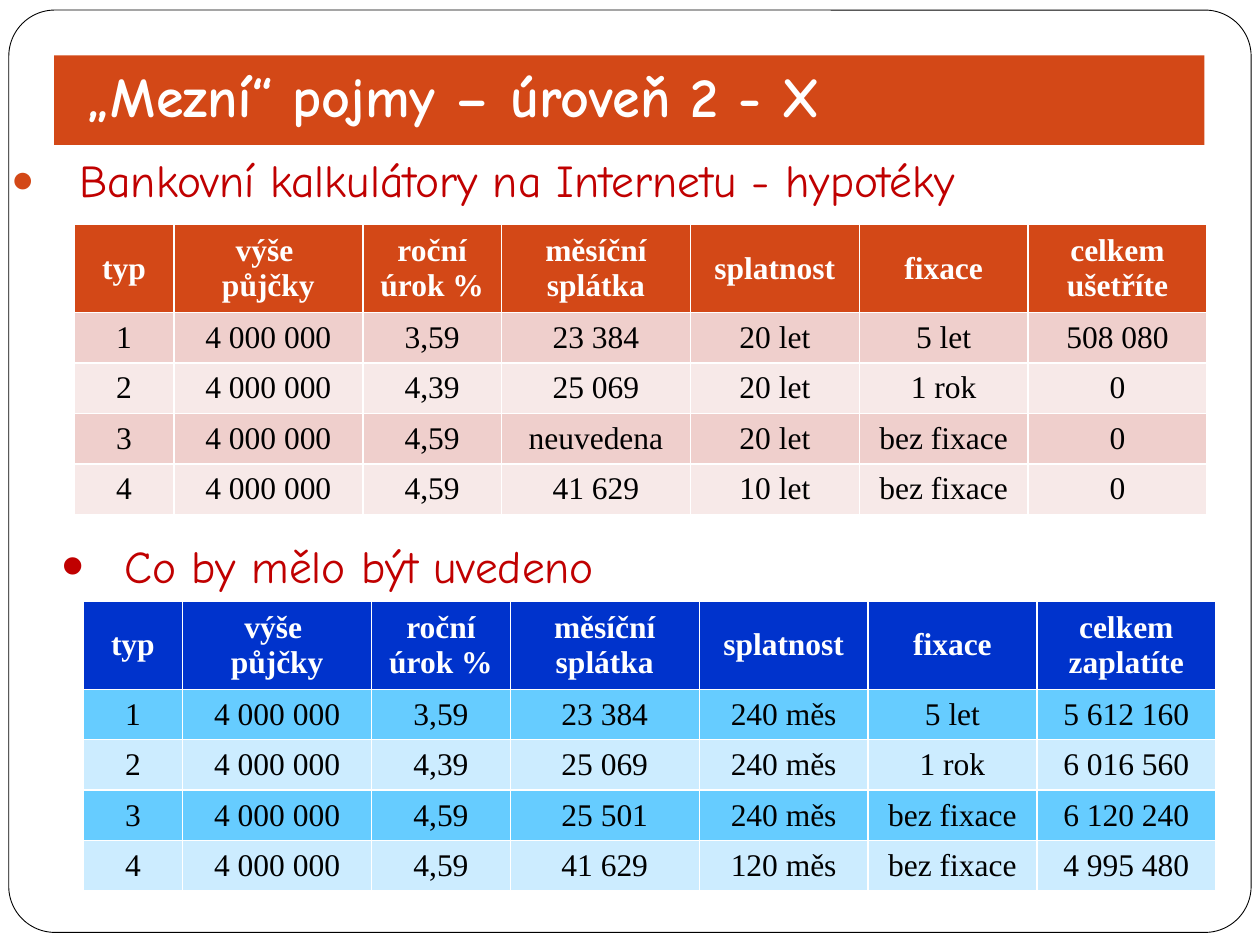
"""Build a slide with two mortgage tables, as banks show them and as they should."""
from lxml.etree import SubElement
from pptx import Presentation
from pptx.dml.color import RGBColor
from pptx.enum.shapes import MSO_SHAPE
from pptx.enum.text import MSO_ANCHOR, PP_ALIGN
from pptx.oxml.ns import qn
from pptx.util import Inches, Pt


def tint(code):
    return RGBColor.from_string(code)


def write(frame, text, font, size, color, bold=False):
    frame.text = text
    frame.word_wrap = True
    for para in frame.paragraphs:
        for run in para.runs:
            run.font.name = font
            run.font.size = Pt(size)
            run.font.bold = bold
            run.font.color.rgb = tint(color)


deck = Presentation()
deck.slide_width, deck.slide_height = Inches(10), Inches(7.5)
slide = deck.slides.add_slide(deck.slide_layouts[6])
shapes = slide.shapes

border = shapes.add_shape(MSO_SHAPE.ROUNDED_RECTANGLE, Inches(0.07), Inches(0.08),
                          Inches(9.86), Inches(7.32))
border.adjustments[0] = 0.05
border.shadow.inherit = False
border.fill.solid()
border.fill.fore_color.rgb = tint("FFFFFF")
border.line.color.rgb = tint("000000")
border.line.width = Pt(0.5)

band = shapes.add_shape(MSO_SHAPE.RECTANGLE, Inches(0.43), Inches(0.44),
                        Inches(9.13), Inches(0.71))
band.shadow.inherit = False
band.fill.solid()
band.fill.fore_color.rgb = tint("D34817")
band.line.fill.background()

title = shapes.add_textbox(Inches(0.43), Inches(0.27), Inches(9.07), Inches(0.85))
frame = title.text_frame
frame.vertical_anchor = MSO_ANCHOR.BOTTOM
frame.margin_left = Inches(0.25)
frame.margin_bottom = Inches(0.1)
write(frame, "„Mezní“ pojmy – úroveň 2 - X", "Comic Neue", 32, "FFFFFF", True)

points = [
    ("Bankovní kalkulátory na Internetu - hypotéky", -0.01, 1.16, 9.61, 0.6,
     0.54, 5.8, "D34817", 85, "●"),
    ("Co by mělo být uvedeno", 0.39, 4.22, 4.67, 0.84,
     0.5, 0, "C00000", 140, "•"),
]
for text, left, top, width, height, indent, space, color, scale, mark in points:
    box = shapes.add_textbox(Inches(left), Inches(top), Inches(width), Inches(height))
    write(box.text_frame, text, "Comic Neue", 26, "C00000")
    para = box.text_frame.paragraphs[0]
    para.space_before = Pt(space)
    props = para._p.get_or_add_pPr()
    props.set("marL", str(Inches(indent)))
    props.set("indent", str(-Inches(indent)))
    SubElement(SubElement(props, qn("a:buClr")), qn("a:srgbClr"), val=color)
    SubElement(props, qn("a:buSzPct"), val=str(scale * 1000))
    SubElement(props, qn("a:buFont"), typeface="Arial")
    SubElement(props, qn("a:buChar"), char=mark)

widths = [0.79, 1.5, 1.1, 1.5, 1.34, 1.34, 1.42]
heads = ["typ", "výše \npůjčky", "roční\núrok %", "měsíční splátka", "splatnost", "fixace"]
loan = "4 000 000"
rates = ["3,59", "4,39", "4,59", "4,59"]
fixes = ["5 let", "1 rok", "bez fixace", "bez fixace"]
tables = [
    (0.59, 1.78, 0.39, ["D34817", "EFCFCC", "F7E9E8"], "celkem\nušetříte",
     ["23 384", "25 069", "neuvedena", "41 629"],
     ["20 let", "20 let", "20 let", "10 let"],
     ["508 080", "0", "0", "0"]),
    (0.66, 4.77, 0.38, ["0033CC", "66CCFF", "CCECFF"], "celkem\nzaplatíte",
     ["23 384", "25 069", "25 501", "41 629"],
     ["240 měs", "240 měs", "240 měs", "120 měs"],
     ["5 612 160", "6 016 560", "6 120 240", "4 995 480"]),
]
for left, top, height, fills, total, pays, terms, sums in tables:
    rows = [heads + [total]]
    for num, (rate, pay, term, fix, cost) in enumerate(zip(rates, pays, terms, fixes, sums), 1):
        rows.append([str(num), loan, rate, pay, term, fix, cost])
    grid = shapes.add_table(len(rows), len(widths), Inches(left), Inches(top),
                            Inches(sum(widths)), Inches(0.65 + 4 * height)).table
    for col, width in zip(grid.columns, widths):
        col.width = Inches(width)
    for r, row in enumerate(rows):
        head = r == 0
        grid.rows[r].height = Inches(0.65 if head else height)
        fill = fills[0] if head else fills[2 - r % 2]
        for c, text in enumerate(row):
            cell = grid.cell(r, c)
            cell.fill.solid()
            cell.fill.fore_color.rgb = tint(fill)
            cell.vertical_anchor = MSO_ANCHOR.MIDDLE
            write(cell.text_frame, text, "Times New Roman", 18,
                  "FFFFFF" if head else "000000", head)
            for para in cell.text_frame.paragraphs:
                para.alignment = PP_ALIGN.CENTER

deck.save("out.pptx")
